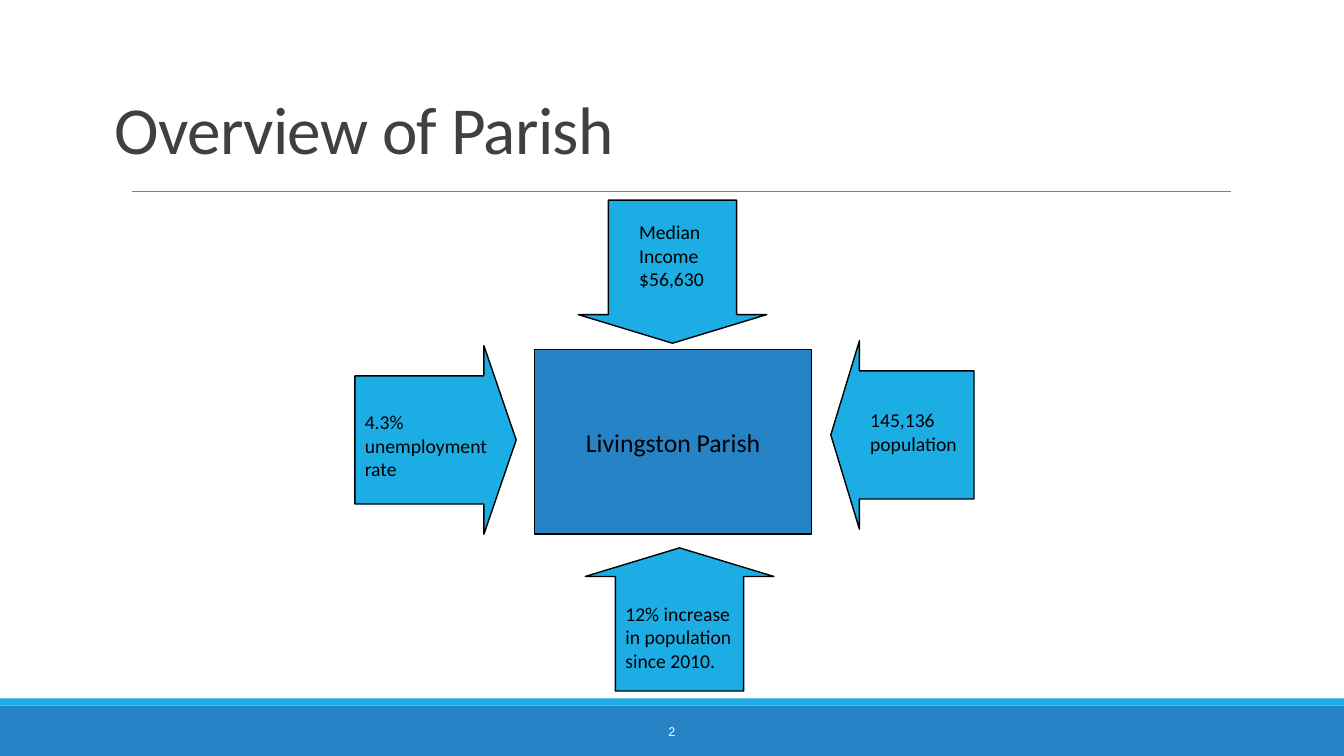
"""Builds the Overview of Parish slide: four arrows pointing at a central box."""
from dataclasses import dataclass

from lxml import etree
from pptx import Presentation
from pptx import util as u
from pptx.dml.color import RGBColor
from pptx.enum import shapes, text
from pptx.oxml.ns import qn

COLUMNS, ROWS = 1333, 750
KIND, ALIGN, ANCHOR = shapes.MSO_SHAPE, text.PP_ALIGN, text.MSO_ANCHOR
TITLE = ("Overview of Parish", (104, 13, 1100, 159))
NUMBER = ("2", (403, 706, 527, 40))
CENTER = ("Livingston Parish", (530, 347, 275, 183))
RULE = (131, 190, 1221, 190)
BANDS = [("box", (0, 700, COLUMNS, 50)), ("accent", (0, 693, COLUMNS, 7))]
ARROWS = [
    (KIND.LEFT_ARROW, (824, 338, 142, 187), ""),
    (KIND.RIGHT_ARROW, (352, 343, 160, 187), "4.3% unemployment rate"),
    (KIND.DOWN_ARROW, (573.5, 198.5, 187, 142), ""),
    (KIND.UP_ARROW, (580.5, 543.5, 187, 142), "12% increase in population since 2010."),
]
LABELS = [
    ("Median Income $56,630", (618, 226, 98, 55)),
    ("145,136 population", (847, 415, 119, 27)),
]
ARROW_SHAPE = (0.68, 0.2)
ARROW_MARGINS = (10, 34, 0, 0)
LABEL_MARGINS = (16, 0, 0, 0)
MARGINS = (10, 5, 10, 5)


@dataclass(frozen=True)
class Theme:
    """Colours, fonts and sizes."""
    box: str = "2683C6"
    accent: str = "1CADE4"
    ink: str = "000000"
    heading: str = "404040"
    rule: str = "808080"
    paper: str = "FFFFFF"
    font: str = "Calibri"
    number_font: str = "Arial"
    title_size: float = 48
    center_size: float = 18.4
    label_size: float = 14
    number_size: float = 9


THEME = Theme()
presentation = Presentation()
presentation.slide_width, presentation.slide_height = u.Inches(13.33), u.Inches(7.5)
column = presentation.slide_width / COLUMNS
row = presentation.slide_height / ROWS


def place(left, top, width, height):
    """Turns grid cells into slide lengths."""
    return [round(cells * unit) for cells, unit in zip((left, top, width, height), (column, row) * 2)]


def write(shape, words, size, color=THEME.ink, font=THEME.font, align=ALIGN.LEFT,
          anchor=ANCHOR.MIDDLE, margins=MARGINS):
    """Fills a shape with one formatted paragraph."""
    left, top, right, bottom = place(*margins)
    frame = shape.text_frame
    layout = {"word_wrap": True, "vertical_anchor": anchor, "margin_left": left,
              "margin_top": top, "margin_right": right, "margin_bottom": bottom}
    for name, value in layout.items():
        setattr(frame, name, value)
    paragraph = frame.paragraphs[0]
    paragraph.alignment = align
    run = paragraph.add_run()
    run.text = words
    for name, value in {"size": u.Pt(size), "name": font}.items():
        setattr(run.font, name, value)
    run.font.color.rgb = RGBColor.from_string(color)
    return paragraph


def draw(slide, kind, cells, fill, line=None):
    """Adds a filled preset shape, outlined when a line colour is given."""
    shape = slide.shapes.add_shape(kind, *place(*cells))
    shape.shadow.inherit = False
    shape.fill.solid()
    shape.fill.fore_color.rgb = RGBColor.from_string(fill)
    if line:
        shape.line.color.rgb = RGBColor.from_string(line)
        shape.line.width = u.Pt(1)
    else:
        shape.line.fill.background()
    return shape


def add_text(slide, words, cells, size, **formats):
    """Adds a text box."""
    return write(slide.shapes.add_textbox(*place(*cells)), words, size, **formats)


def main():
    """Draws the slide and saves it."""
    slide = presentation.slides.add_slide(presentation.slide_layouts[6])
    for color, cells in BANDS:
        draw(slide, KIND.RECTANGLE, cells, getattr(THEME, color))
    rule = slide.shapes.add_connector(shapes.MSO_CONNECTOR.STRAIGHT, *place(*RULE))
    rule.line.color.rgb = RGBColor.from_string(THEME.rule)
    rule.line.width = u.Pt(0.5)
    etree.SubElement(rule._element.spPr, qn("a:effectLst"))
    add_text(slide, *NUMBER, THEME.number_size, color=THEME.paper,
             font=THEME.number_font, align=ALIGN.CENTER)

    for kind, cells, words in ARROWS:
        arrow = draw(slide, kind, cells, THEME.accent, THEME.ink)
        for index, share in enumerate(ARROW_SHAPE):
            arrow.adjustments[index] = share
        if words:
            write(arrow, words, THEME.label_size, anchor=ANCHOR.TOP, margins=ARROW_MARGINS)
    for words, cells in LABELS:
        add_text(slide, words, cells, THEME.label_size, margins=LABEL_MARGINS)

    words, cells = CENTER
    center = draw(slide, KIND.RECTANGLE, cells, THEME.box, THEME.ink)
    write(center, words, THEME.center_size, align=ALIGN.CENTER)

    title = add_text(slide, *TITLE, THEME.title_size, color=THEME.heading, anchor=ANCHOR.BOTTOM)
    title.line_spacing = 0.85
    title.runs[0].font._element.set("spc", "-50")
    presentation.save("out.pptx")


if __name__ == "__main__":
    main()
